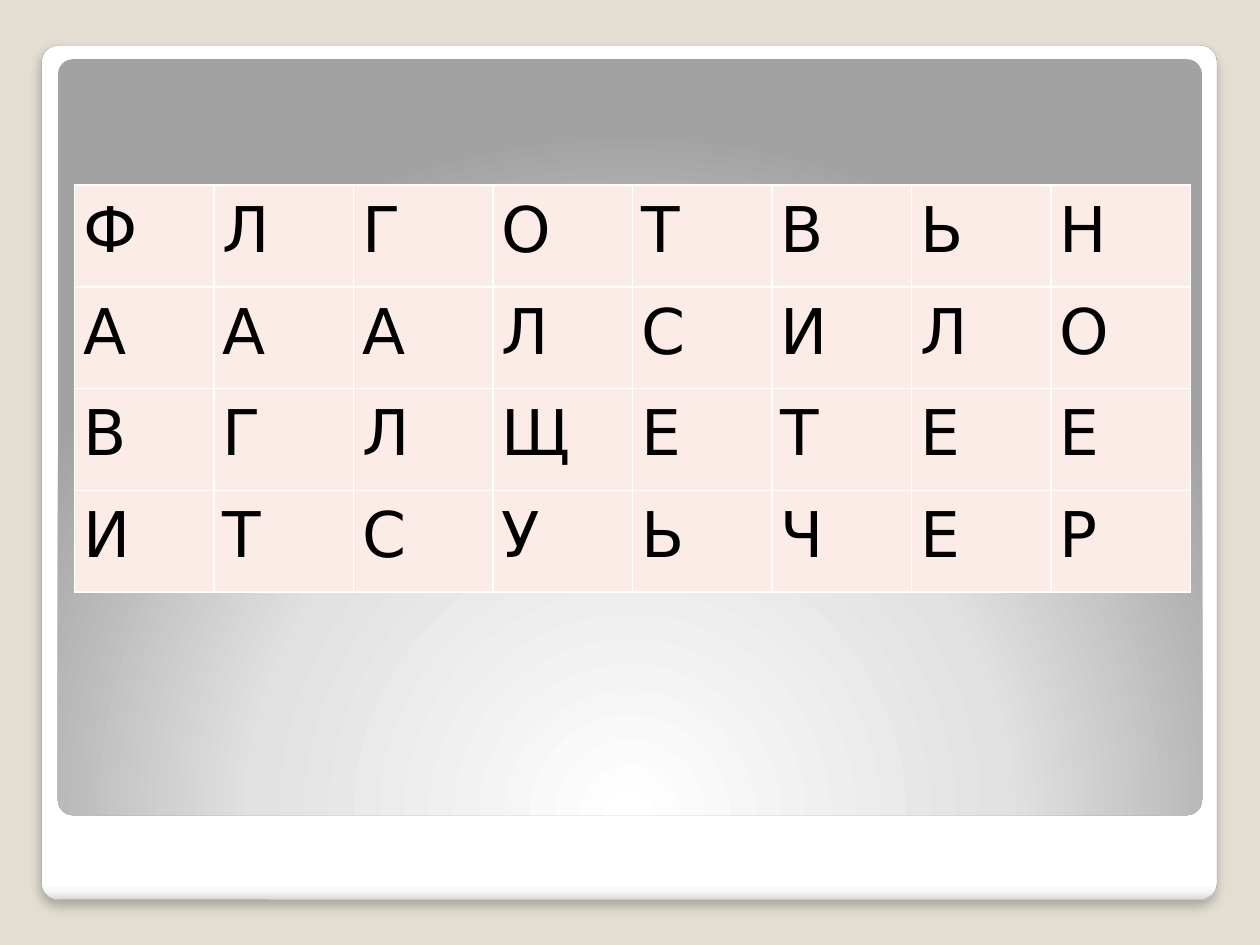
"""Build a slide with a framed grid of Cyrillic letters."""
from dataclasses import dataclass

from lxml.etree import SubElement
from pptx import Presentation
from pptx.dml.color import RGBColor
from pptx.enum.shapes import MSO_SHAPE
from pptx.oxml import parse_xml
from pptx.oxml.ns import nsdecls, qn
from pptx.util import Inches, Pt


@dataclass(frozen=True)
class Theme:
    """Colours, font and type size of the slide."""
    background: str = "E3DED1"
    frame_line: str = "A4A4A4"
    shadow: str = "000000"
    cell: str = "FCECE7"
    border: str = "FFFFFF"
    text: str = "000000"
    font: str = "DejaVu Sans"
    letter_size: int = 36
    frame_stops: tuple = ((0, "FFFFFF"), (98, "FFFFFF"), (99, "F7F7F7"), (100, "DADADA"))
    panel_stops: tuple = ((0, "FFFFFF"), (55, "E1E1E1"), (100, "A2A2A2"))


THEME = Theme()
LETTER_ROWS = ("ФЛГОТВЬН", "АААЛСИЛО", "ВГЛЩЕТЕЕ", "ИТСУЬЧЕР")
LINEAR = '<a:lin ang="5400000" scaled="0"/>'
RADIAL = '<a:path path="circle"><a:fillToRect l="50000" t="175000" r="50000" b="-75000"/></a:path>'


def add_rounded_panel(page, left, top, width, height, stops, direction):
    """Add a rounded rectangle with a gradient fill."""
    panel = page.shapes.add_shape(
        MSO_SHAPE.ROUNDED_RECTANGLE, Inches(left), Inches(top), Inches(width), Inches(height))
    panel.adjustments[0] = 0.02
    panel.shadow.inherit = False
    panel.line.fill.background()
    panel.fill.background()
    stop_xml = "".join(
        f'<a:gs pos="{position * 1000}"><a:srgbClr val="{colour}"/></a:gs>'
        for position, colour in stops)
    gradient = parse_xml(
        f'<a:gradFill {nsdecls("a")} rotWithShape="1"><a:gsLst>{stop_xml}</a:gsLst>{direction}</a:gradFill>')
    properties = panel.element.spPr
    properties.replace(properties.find(qn("a:noFill")), gradient)
    return panel


def add_drop_shadow(panel, colour, opacity, blur, distance):
    """Give a shape a soft shadow that falls straight down."""
    effects = panel.element.spPr.find(qn("a:effectLst"))
    shadow = SubElement(effects, qn("a:outerShdw"), blurRad=str(Pt(blur)), dist=str(Pt(distance)),
                        dir="5400000", algn="tl", rotWithShape="0")
    shade = SubElement(shadow, qn("a:srgbClr"), val=colour)
    SubElement(shade, qn("a:alpha"), val=str(opacity * 1000))


def write_text(frame, text, *, size, colour, font):
    """Write one formatted run into a text frame."""
    span = frame.paragraphs[0].add_run()
    span.text = text
    span.font.size = Pt(size)
    span.font.name = font
    span.font.color.rgb = RGBColor.from_string(colour)


def add_cell_borders(cell, colour, width):
    """Draw the four borders of a table cell."""
    properties = cell._tc.get_or_add_tcPr()
    for side in ("lnL", "lnR", "lnT", "lnB"):
        line = SubElement(properties, qn(f"a:{side}"), w=str(Pt(width)))
        fill = SubElement(line, qn("a:solidFill"))
        SubElement(fill, qn("a:srgbClr"), val=colour)


def style_cell(cell):
    """Set the margins, borders and fill of a table cell."""
    cell.margin_left = cell.margin_right = Inches(0.07)
    cell.margin_top = cell.margin_bottom = Inches(0.07)
    add_cell_borders(cell, THEME.border, 1)
    cell.fill.solid()
    cell.fill.fore_color.rgb = RGBColor.from_string(THEME.cell)


def add_letter_table(page, left, top, width, height, letter_rows):
    """Add a table with one letter in each cell."""
    table = page.shapes.add_table(
        len(letter_rows), len(letter_rows[0]),
        Inches(left), Inches(top), Inches(width), Inches(height)).table
    table.first_row = False
    table.horz_banding = False
    for row_index, letters in enumerate(letter_rows):
        for column_index, letter in enumerate(letters):
            cell = table.cell(row_index, column_index)
            style_cell(cell)
            write_text(cell.text_frame, letter, size=THEME.letter_size,
                       colour=THEME.text, font=THEME.font)


def main():
    """Build and save the deck."""
    deck = Presentation()
    deck.slide_width, deck.slide_height = Inches(10), Inches(7.5)
    page = deck.slides.add_slide(deck.slide_layouts[6])
    page.background.fill.solid()
    page.background.fill.fore_color.rgb = RGBColor.from_string(THEME.background)
    frame = add_rounded_panel(page, 0.33, 0.36, 9.33, 6.78, THEME.frame_stops, LINEAR)
    frame.line.color.rgb = RGBColor.from_string(THEME.frame_line)
    frame.line.width = Pt(0.16)
    add_drop_shadow(frame, THEME.shadow, opacity=25, blur=6, distance=4)
    add_rounded_panel(page, 0.46, 0.47, 9.08, 6, THEME.panel_stops, RADIAL)
    add_letter_table(page, 0.59, 1.47, 8.86, 3.23, LETTER_ROWS)
    deck.save("out.pptx")


if __name__ == "__main__":
    main()
